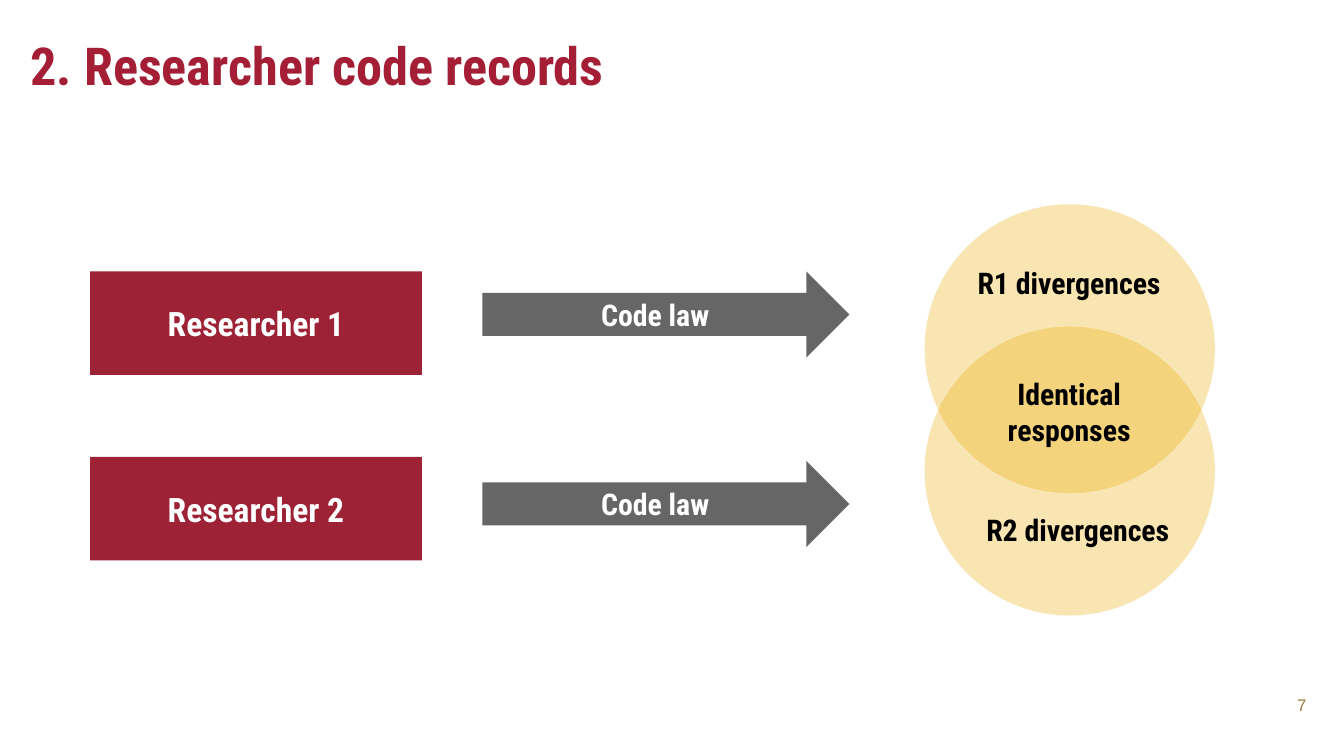
from dataclasses import dataclass

from lxml import etree
from pptx import Presentation
from pptx import util as u
from pptx.dml.color import RGBColor
from pptx.enum import shapes, text
from pptx.oxml.ns import qn

# Grid: square cells of a tenth of an inch
CELL = u.Inches(0.1)
COLUMNS, ROWS = 100, 56.25

CRIMSON = RGBColor(0xA4, 0x1E, 0x35)
DARK_RED = RGBColor(0x9D, 0x22, 0x35)
GREY = RGBColor(0x66, 0x66, 0x66)
GOLD = RGBColor(0xEA, 0xAA, 0x00)
BRONZE = RGBColor(0x9A, 0x7E, 0x40)
WHITE = RGBColor(0xFF, 0xFF, 0xFF)
BLACK = RGBColor(0x00, 0x00, 0x00)

HEADING_FONT = "Roboto Condensed"
SHAPE = shapes.MSO_SHAPE
ALIGN = text.PP_ALIGN


@dataclass(frozen=True)
class Area:
    """A rectangle in grid columns and rows."""
    column: float
    row: float
    columns: float
    rows: float

    def lengths(self) -> list[int]:
        return [round(cells * CELL) for cells in
                (self.column, self.row, self.columns, self.rows)]


@dataclass(frozen=True)
class Label:
    wording: str
    area: Area


def write(frame, wording: str, *, size: float, color: RGBColor,
          font: str = HEADING_FONT, bold: bool = True,
          align=ALIGN.CENTER, anchor=text.MSO_ANCHOR.TOP,
          inset: float = 0.05) -> None:
    """Put one formatted paragraph in a text frame."""
    frame.word_wrap = True
    frame.vertical_anchor = anchor
    frame.margin_top = frame.margin_bottom = u.Inches(inset)
    para = frame.paragraphs[0]
    para.alignment = align
    span = para.add_run()
    span.text = wording
    span.font.name = font
    span.font.size = u.Pt(size)
    span.font.bold = bold
    span.font.color.rgb = color


def add_text(page, label: Label, **style) -> None:
    box = page.shapes.add_textbox(*label.area.lengths())
    write(box.text_frame, label.wording, **style)


def add_figure(page, kind, area: Area, fill: RGBColor):
    figure = page.shapes.add_shape(kind, *area.lengths())
    figure.shadow.inherit = False
    figure.fill.solid()
    figure.fill.fore_color.rgb = fill
    figure.line.fill.background()
    return figure


def add_block(page, kind, label: Label, fill: RGBColor, size: float) -> None:
    block = add_figure(page, kind, label.area, fill)
    write(block.text_frame, label.wording, size=size, color=WHITE,
          anchor=text.MSO_ANCHOR.MIDDLE)


def add_circle(page, area: Area, opacity: int) -> None:
    circle = add_figure(page, SHAPE.OVAL, area, GOLD)
    color = circle._element.spPr.find(qn("a:solidFill"))[0]
    etree.SubElement(color, qn("a:alpha")).set("val", str(opacity * 1000))


RESEARCHERS = [
    Label("Researcher 1", Area(6.7, 20.2, 24.7, 7.7)),
    Label("Researcher 2", Area(6.7, 34, 24.7, 7.7)),
]
ARROWS = [Label("Code law", Area(35.9, row, 27.3, 6.4)) for row in (20.2, 34.3)]
CIRCLES = [Area(68.8, row, 21.6, 21.5) for row in (15.2, 24.3)]
VENN_LABELS = [
    Label("R1 divergences", Area(68, 19.2, 23.1, 3.7)),
    Label("R2 divergences", Area(71, 37.6, 18.4, 3.7)),
    Label("Identical responses", Area(72.6, 27.5, 13.9, 6.4)),
]
TITLE = Label("2. Researcher code records", Area(1.3, 1.5, 91.6, 6.3))
PAGE_NUMBER = Label("7", Area(93.8, 50.9, 4.4, 3.7))


def main() -> None:
    deck = Presentation()
    deck.slide_width = round(COLUMNS * CELL)
    deck.slide_height = round(ROWS * CELL)
    page = deck.slides.add_slide(deck.slide_layouts[6])

    # Title and page number
    add_text(page, TITLE, size=28, color=CRIMSON, align=ALIGN.LEFT, inset=0.1)
    add_text(page, PAGE_NUMBER, size=9, color=BRONZE, font="Arial",
             bold=False, align=ALIGN.RIGHT, inset=0.1)

    # Each researcher codes the law
    for researcher in RESEARCHERS:
        add_block(page, SHAPE.RECTANGLE, researcher, DARK_RED, size=18)
    for arrow in ARROWS:
        add_block(page, SHAPE.RIGHT_ARROW, arrow, GREY, size=16)

    # Overlap of the two sets of responses
    for circle in CIRCLES:
        add_circle(page, circle, opacity=30)
    for label in VENN_LABELS:
        add_text(page, label, size=16, color=BLACK)

    deck.save("out.pptx")


if __name__ == "__main__":
    main()
